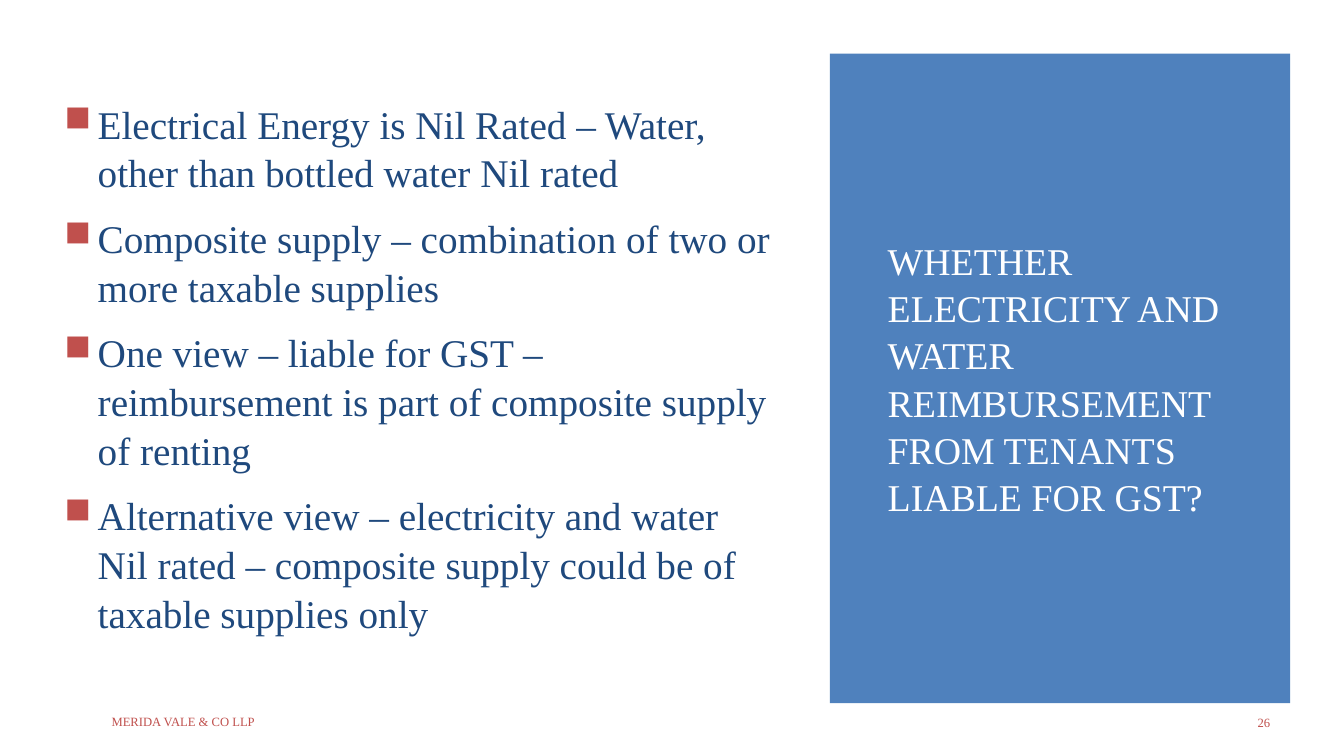
from pptx import Presentation
from pptx.dml.color import RGBColor
from pptx.enum.shapes import MSO_SHAPE as Shape
from pptx.enum.text import MSO_ANCHOR as Anchor, PP_ALIGN as Align
from pptx.oxml.ns import qn
from pptx.util import Inches, Pt
from lxml.etree import SubElement

WHITE, BLUE, NAVY, RED = "FFFFFF", "4F81BD", "1F497D", "C0504D"
TITLE = "WHETHER ELECTRICITY AND WATER REIMBURSEMENT FROM TENANTS LIABLE FOR GST?"
POINTS = [
    "Electrical Energy is Nil Rated – Water, other than bottled water Nil rated",
    "Composite supply – combination of two or more taxable supplies",
    "One view – liable for GST – reimbursement is part of composite supply of renting",
    "Alternative view – electricity and water Nil rated – composite supply could be of taxable supplies only",
]


def color(code):
    return RGBColor.from_string(code)


def write(para, text, size=28, ink=NAVY, font="Times New Roman", align=Align.LEFT,
          before=0, after=0, spacing=1.0):
    para.alignment = align
    para.space_before, para.space_after = Pt(before), Pt(after)
    para.line_spacing = spacing
    span = para.add_run()
    span.text = text
    span.font.name, span.font.size = font, Pt(size)
    span.font.color.rgb = color(ink)


class SlideBuilder:
    columns, rows = 160, 90

    def __init__(self, deck):
        self.deck = deck
        self.page = deck.slides.add_slide(deck.slide_layouts[6])

    def place(self, left, top, width, height):
        across = self.deck.slide_width / self.columns
        down = self.deck.slide_height / self.rows
        return [round(n) for n in (left * across, top * down, width * across, height * down)]

    def panel(self, cells, fill):
        panel = self.page.shapes.add_shape(Shape.RECTANGLE, *self.place(*cells))
        panel.shadow.inherit = False
        panel.fill.solid()
        panel.fill.fore_color.rgb = color(fill)
        panel.line.fill.background()

    def frame(self, cells):
        frame = self.page.shapes.add_textbox(*self.place(*cells)).text_frame
        frame.word_wrap = True
        frame.vertical_anchor = Anchor.MIDDLE
        return frame

    def text(self, cells, text, **style):
        write(self.frame(cells).paragraphs[0], text, **style)

    def bullets(self, cells, items, mark=RED, **style):
        frame = self.frame(cells)
        for index, item in enumerate(items):
            para = frame.add_paragraph() if index else frame.paragraphs[0]
            self.bullet(para, mark)
            write(para, item, before=5.6 if index else 0, after=6, **style)

    def bullet(self, para, mark):
        props = para._p.get_or_add_pPr()
        indent = Inches(0.33)
        props.set("marL", str(indent))
        props.set("indent", str(-indent))
        SubElement(SubElement(props, qn("a:buClr")), qn("a:srgbClr"), val=mark)
        SubElement(props, qn("a:buSzPct"), val="92000")
        SubElement(props, qn("a:buChar"), char="■")


def main():
    deck = Presentation()
    deck.slide_width, deck.slide_height = Inches(13.33), Inches(7.5)
    slide = SlideBuilder(deck)
    slide.panel((98.8, 6.4, 54.8, 77.3), BLUE)
    slide.text((104.5, 14.6, 43, 60.7), TITLE, size=27, ink=WHITE, spacing=1.04)
    slide.bullets((6.5, 6.4, 87.3, 74.6), POINTS, spacing=1.04)
    slide.text((12.1, 83.5, 80.2, 4.8), "MERIDA VALE & CO LLP", size=9, ink=RED, after=6)
    slide.text((138.6, 83.6, 13.8, 4.8), "26", size=9, ink=RED, align=Align.RIGHT, after=6)
    deck.save("out.pptx")


if __name__ == "__main__":
    main()
